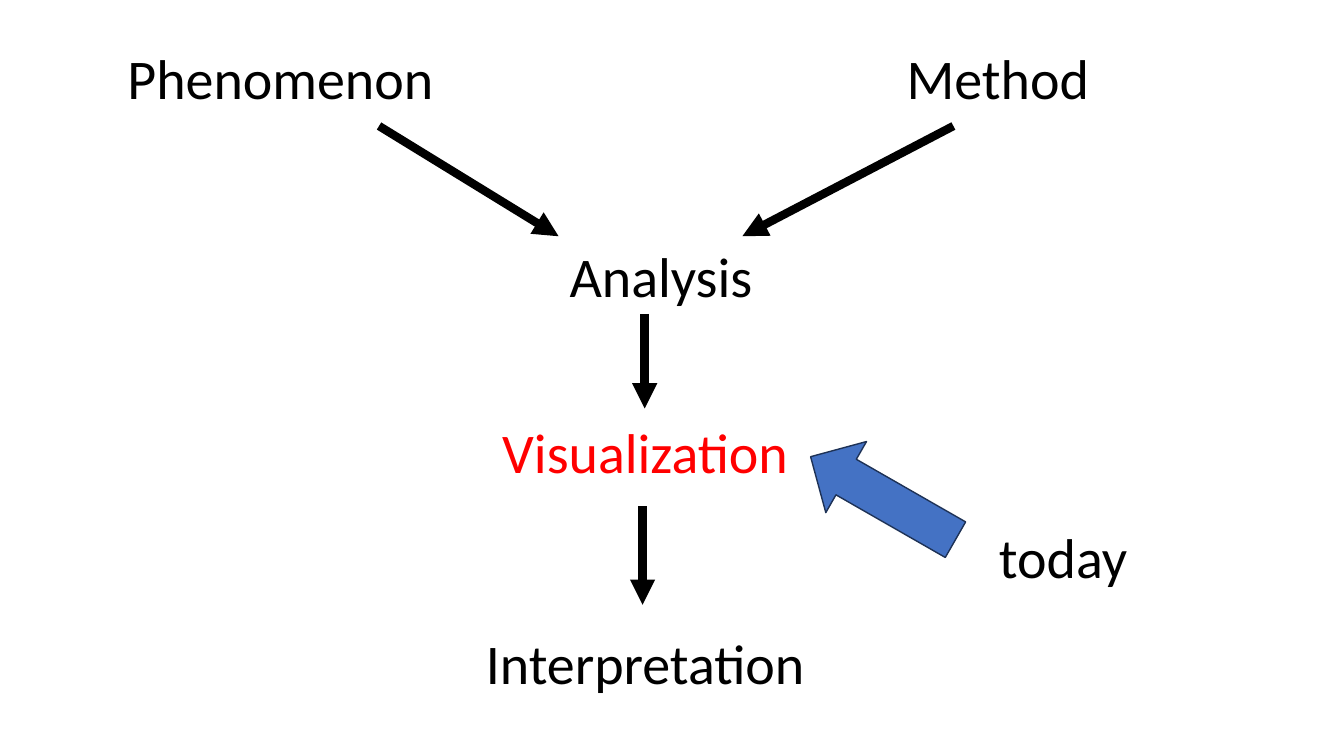
from collections import namedtuple

from lxml.etree import SubElement
from pptx import Presentation
from pptx.dml.color import RGBColor
from pptx.enum.shapes import MSO_CONNECTOR as Link, MSO_SHAPE as Shape
from pptx.enum.text import MSO_AUTO_SIZE as Fit, PP_ALIGN as Align
from pptx.oxml.ns import qn
from pptx.util import Emu, Pt

EMU_PER_PX = 9525
FONT = "Calibri"
LABEL_HEIGHT = 74
COLORS = {
    "ink": "000000",
    "highlight": "FF0000",
    "pointer": "4472C4",
    "pointer_edge": "1E3256",
}
Box = namedtuple("Box", "left top width height")


def px(length):
    return Emu(length * EMU_PER_PX)


def color(name):
    return RGBColor.from_string(COLORS[name])


def add_label(page, text, left, top, width, align=Align.LEFT, ink="ink"):
    label = page.shapes.add_textbox(px(left), px(top), px(width), px(LABEL_HEIGHT))
    frame = label.text_frame
    frame.word_wrap = True
    frame.auto_size = Fit.SHAPE_TO_FIT_TEXT
    para = frame.paragraphs[0]
    para.alignment = align
    span = para.add_run()
    span.text = text
    span.font.name = FONT
    span.font.size = Pt(40)
    span.font.color.rgb = color(ink)


def add_arrow(page, start, end):
    arrow = page.shapes.add_connector(Link.STRAIGHT, *map(px, start + end))
    arrow.line.width = Pt(6)
    arrow.line.color.rgb = color("ink")
    SubElement(arrow.line._get_or_add_ln(), qn("a:tailEnd"), type="triangle")
    SubElement(arrow._element.spPr, qn("a:effectLst"))


def draw_inputs(page, box):
    inputs = [
        ("Phenomenon", 0, 398, 249, 420),
        ("Method", 742, 381, 796, 595),
    ]
    for text, offset, width, start, end in inputs:
        add_label(page, text, box.left + offset, box.top, width)
        add_arrow(
            page,
            (box.left + start, box.top + 83),
            (box.left + end, box.top + box.height),
        )


def draw_steps(page, box):
    steps = [
        ("Analysis", 15, 0, 1035, "ink"),
        ("Visualization", 0, 168, 1035, "highlight"),
        ("Interpretation", 280, 369, 475, "ink"),
    ]
    for text, left, top, width, ink in steps:
        add_label(page, text, box.left + left, box.top + top, width, Align.CENTER, ink)
    for center, start, end in [(517, 74, 164), (515, 257, 351)]:
        x = box.left + center
        add_arrow(page, (x, box.top + start), (x, box.top + end))


def draw_callout(page, box):
    pointer = page.shapes.add_shape(
        Shape.DOWN_ARROW, px(box.left + 30), px(box.top), px(78), px(159)
    )
    pointer.rotation = 119.8
    pointer.shadow.inherit = False
    pointer.fill.solid()
    pointer.fill.fore_color.rgb = color("pointer")
    pointer.line.color.rgb = color("pointer_edge")
    pointer.line.width = Pt(1)
    add_label(page, "today", box.left + 170, box.top + 98, box.width - 170)


def main():
    deck = Presentation()
    deck.slide_width, deck.slide_height = px(1280), px(720)
    page = deck.slides.add_slide(deck.slide_layouts[6])
    draw_inputs(page, Box(112, 37, 1123, 188))
    draw_steps(page, Box(97, 225, 1050, 443))
    draw_callout(page, Box(772, 395, 410, 172))
    deck.save("out.pptx")


if __name__ == "__main__":
    main()
